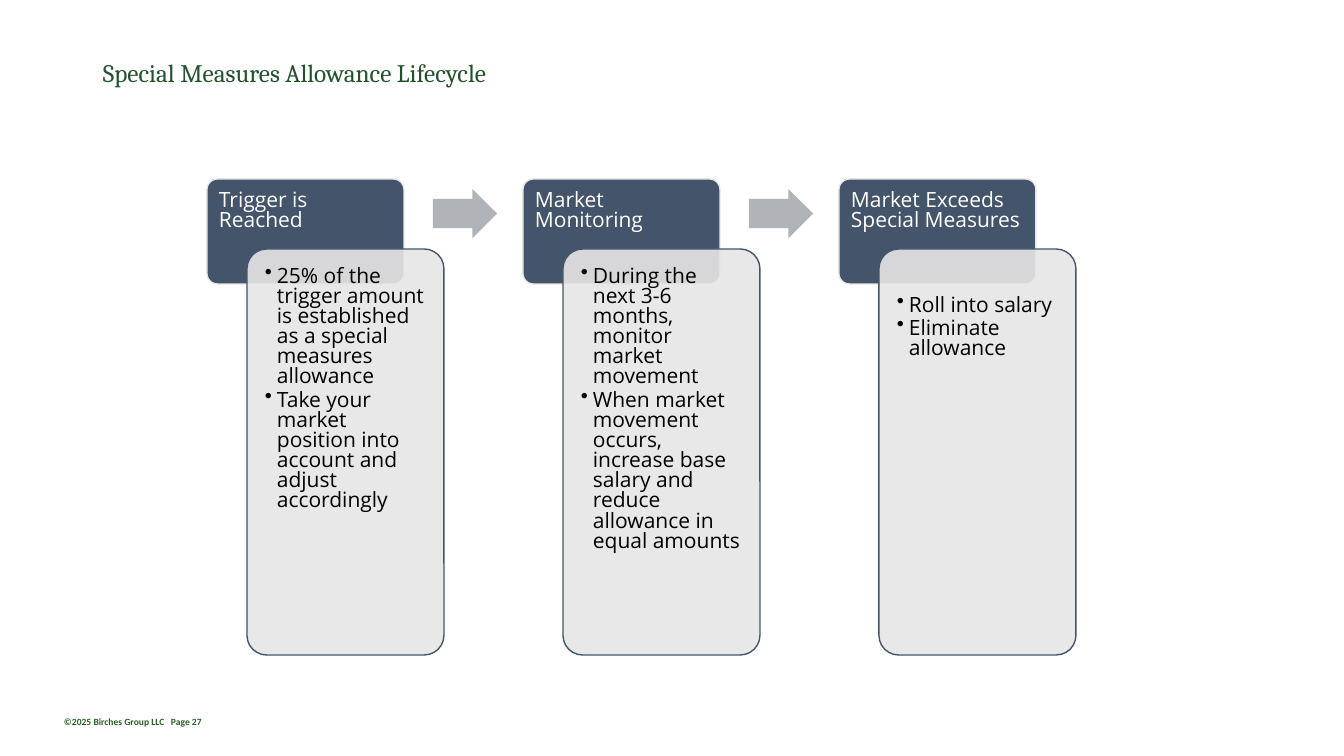
from dataclasses import dataclass

from lxml import etree
from pptx import Presentation
from pptx.dml.color import RGBColor
from pptx.enum import shapes, text
from pptx.oxml.ns import qn
from pptx.util import Emu, Pt

SLIDE_W, SLIDE_H = 1344, 756
EMU_PER_PX = 12192000 / SLIDE_W


@dataclass(frozen=True)
class Theme:
    """Colours, fonts and type sizes of the slide."""
    green: str = "22522C"
    footer_green: str = "2C5E28"
    navy: str = "44546A"
    pale: str = "E7E6E6"
    arrow: str = "B0B4B9"
    white: str = "FFFFFF"
    black: str = "000000"
    title_font: str = "Cambria"
    body_font: str = "Open Sans"
    footer_font: str = "Calibri"
    title_size: float = 18
    body_size: float = 15
    footer_size: float = 6.8


THEME = Theme()

STAGES = [
    ("Trigger is Reached", 12,
     ["25% of the trigger amount is established as a special measures allowance",
      "Take your market position into account and adjust accordingly"]),
    ("Market Monitoring", 12,
     ["During the next 3-6 months, monitor market movement",
      "When market movement occurs, increase base salary and reduce "
      "allowance in equal amounts"]),
    ("Market Exceeds Special Measures", 41,
     ["Roll into salary", "Eliminate allowance"]),
]


def px(n):
    """Turn pixels into EMU."""
    return Emu(round(n * EMU_PER_PX))


def add_panel(s, kind, box, fill, line=None, adj=(0.1,), alpha=None):
    """Add a filled preset shape, optionally outlined and see-through."""
    sp = s.shapes.add_shape(kind, *map(px, box))
    sp.shadow.inherit = False
    for i, value in enumerate(adj):
        sp.adjustments[i] = value
    sp.fill.solid()
    sp.fill.fore_color.rgb = RGBColor.from_string(fill)
    if alpha:
        clr = sp._element.spPr.find(qn("a:solidFill"))[0]
        etree.SubElement(clr, qn("a:alpha"), val=str(alpha * 1000))
    if line:
        sp.line.color.rgb = RGBColor.from_string(line)
        sp.line.width = Pt(1)
    else:
        sp.line.fill.background()
    return sp


def add_text(s, box, insets, anchor=text.MSO_ANCHOR.TOP):
    """Add an empty wrapping text box and return its frame."""
    tf = s.shapes.add_textbox(*map(px, box)).text_frame
    tf.word_wrap = True
    tf.vertical_anchor = anchor
    tf.margin_left, tf.margin_top, tf.margin_right, tf.margin_bottom = map(px, insets)
    return tf


def add_run(p, words, font, size, color, bold=False):
    """Add one styled run to a paragraph."""
    r = p.add_run()
    r.text = words
    r.font.name = font
    r.font.size = Pt(size)
    r.font.bold = bold
    r.font.color.rgb = RGBColor.from_string(color)


def set_bullet(p, indent):
    """Give a paragraph a hanging round bullet."""
    pPr = p._p.get_or_add_pPr()
    pPr.set("marL", str(px(indent)))
    pPr.set("indent", str(-px(indent)))
    etree.SubElement(pPr, qn("a:buChar"), char="•")


def add_title(s, box):
    """Place the slide title."""
    p = add_text(s, box, (10, 5, 10, 5), text.MSO_ANCHOR.MIDDLE).paragraphs[0]
    p.line_spacing = 0.9
    add_run(p, "Special Measures Allowance Lifecycle",
            THEME.title_font, THEME.title_size, THEME.green)


def add_footer(s, box):
    """Place the copyright line and page number, set apart by a tab."""
    p = add_text(s, box, (10, 5, 10, 5)).paragraphs[0]
    tabs = etree.SubElement(p._p.get_or_add_pPr(), qn("a:tabLst"))
    etree.SubElement(tabs, qn("a:tab"), pos=str(px(107)), algn="l")
    for words in ("©2025 Birches Group LLC", "\tPage 27"):
        add_run(p, words, THEME.footer_font, THEME.footer_size,
                THEME.footer_green, bold=True)


def add_stage(s, box, heading, top_inset, points):
    """Place a heading card with its overlapping panel of points."""
    x, y, w, h = box
    card_w, body_x, body_y = w - 40, x + 40, y + 70
    body_h = h - 70
    rounded = shapes.MSO_SHAPE.ROUNDED_RECTANGLE
    add_panel(s, rounded, (x, y, card_w, 105), THEME.navy, THEME.pale)
    p = add_text(s, (x, y, card_w, 70), (12, 12, 12, 6)).paragraphs[0]
    p.line_spacing = 0.8
    add_run(p, heading, THEME.body_font, THEME.body_size, THEME.white)

    add_panel(s, rounded, (body_x, body_y, card_w, body_h),
              THEME.pale, THEME.navy, alpha=90)
    tf = add_text(s, (body_x + 6, body_y + 6, card_w - 12, body_h - 12),
                  (12, top_inset, 12, 12))
    for i, point in enumerate(points):
        p = tf.add_paragraph() if i else tf.paragraphs[0]
        set_bullet(p, 12)
        p.line_spacing = 0.8
        p.space_after = Pt(2.25)
        add_run(p, point, THEME.body_font, THEME.body_size, THEME.black)


def add_lifecycle(s, box):
    """Place the stages in equal steps with arrows between them."""
    x, y, w, h = box
    stage_w = 237
    step = (w - stage_w) // (len(STAGES) - 1)
    for i, stage in enumerate(STAGES):
        left = x + i * step
        add_stage(s, (left, y, stage_w, h), *stage)
        if i < len(STAGES) - 1:
            add_panel(s, shapes.MSO_SHAPE.RIGHT_ARROW, (left + 226, y + 10, 64, 49),
                      THEME.arrow, adj=(0.6, 0.5))


def main():
    """Build the slide and save it."""
    prs = Presentation()
    prs.slide_width, prs.slide_height = px(SLIDE_W), px(SLIDE_H)
    s = prs.slides.add_slide(prs.slide_layouts[6])
    add_footer(s, (54, 711, 304, 21))
    add_title(s, (93, 40, 1159, 68))
    add_lifecycle(s, (207, 179, 869, 476))
    prs.save("out.pptx")


if __name__ == "__main__":
    main()
